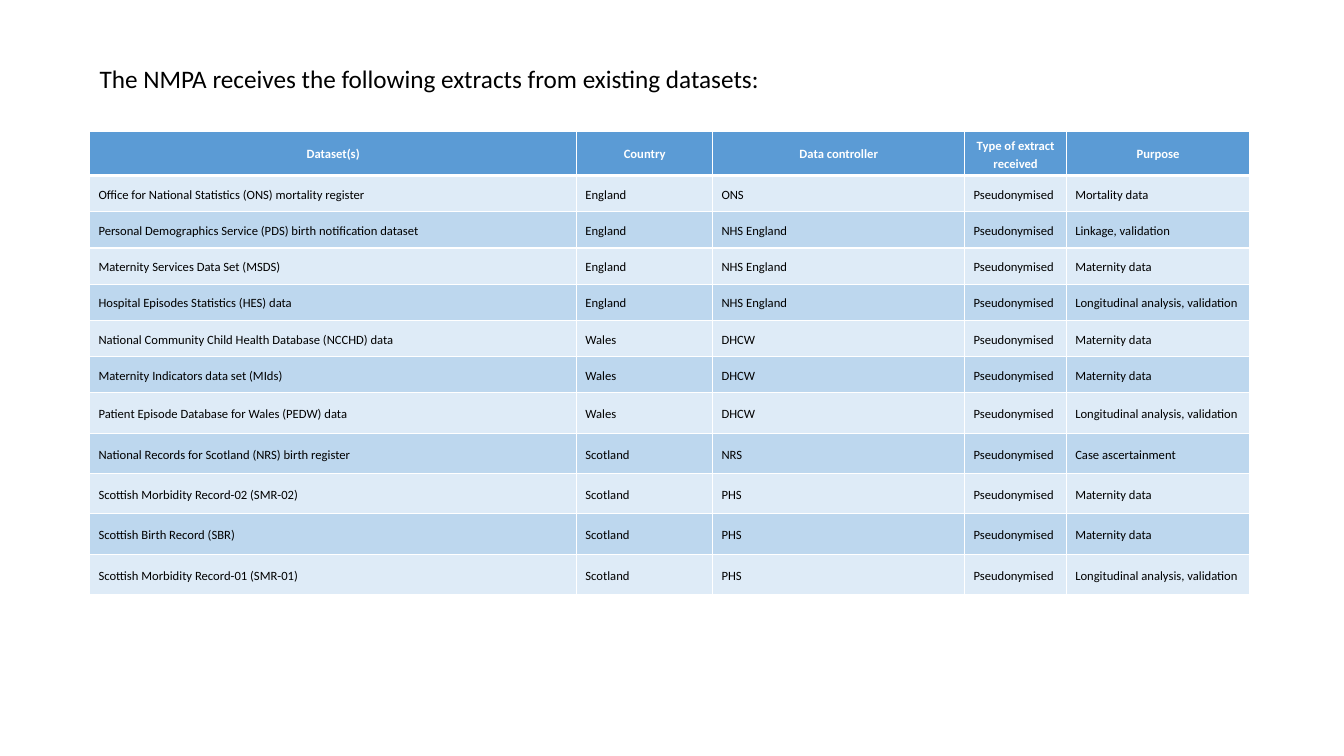
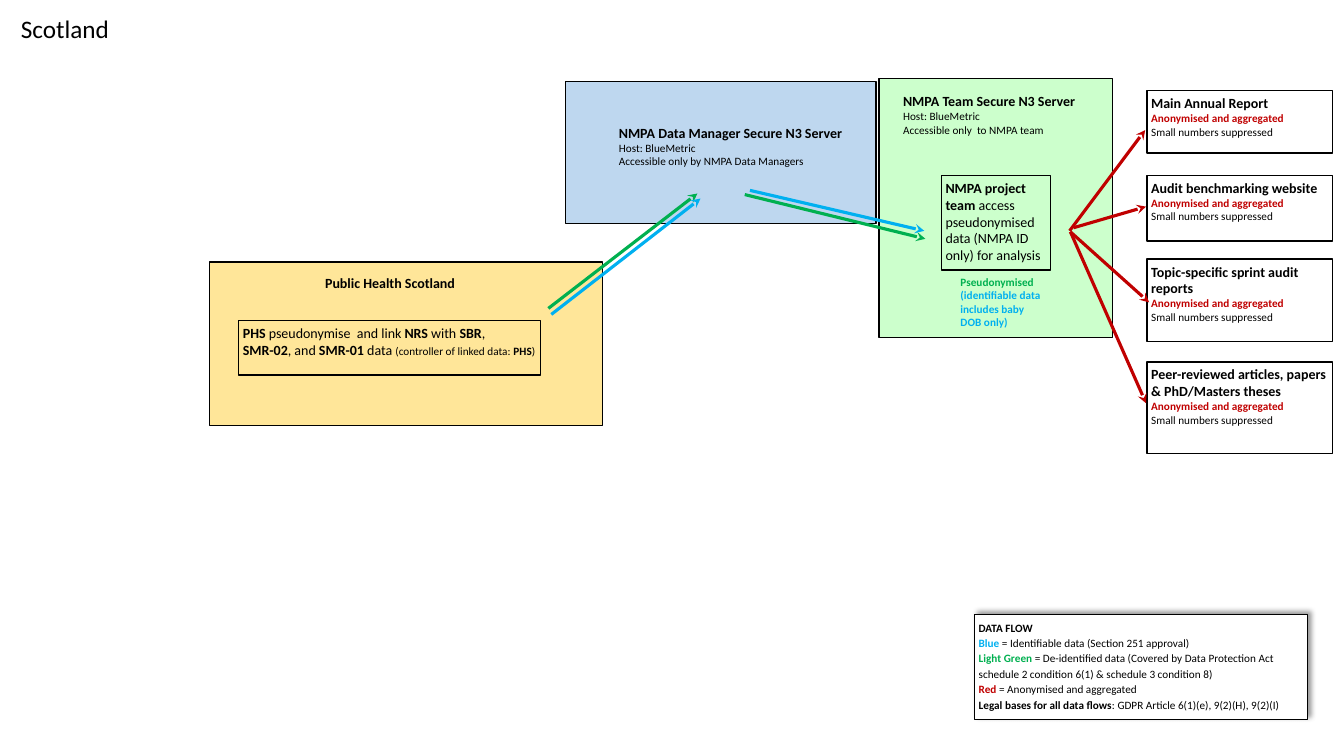
from dataclasses import dataclass
from typing import NamedTuple, Optional

from lxml.etree import SubElement
from pptx import Presentation
from pptx.dml.color import RGBColor
from pptx.enum.shapes import MSO_CONNECTOR, MSO_SHAPE
from pptx.enum.text import MSO_ANCHOR, PP_ALIGN
from pptx.oxml import parse_xml
from pptx.oxml.ns import nsdecls, qn
from pptx.util import Pt

# Shared look
FONT = "Calibri"
BLACK, WHITE = "000000", "FFFFFF"
BLUE, GREEN, RED = "00B0F0", "00B050", "C00000"
HEADER_FILL, ROW_FILLS = "5B9BD5", ("DEEBF7", "BDD7EE")
TITLE_SIZE, HEADING_SIZE, CELL_SIZE, NOTE_SIZE = 18, 10, 9, 8
INSET, TITLE_INSETS = 2.88, (7.2, 3.6)


class Span(NamedTuple):
    text: str
    size: float = NOTE_SIZE
    color: str = BLACK
    bold: bool = False


class Area(NamedTuple):
    left: float
    top: float
    width: float
    height: float


Lines = list[list[Span]]


@dataclass
class Panel:
    area: Area
    lines: Lines
    fill: Optional[str] = None
    border: float = 1
    spacing: Optional[float] = None


@dataclass
class Label:
    area: Area
    lines: Lines
    align: Optional[PP_ALIGN] = None
    insets: tuple[float, float] = (INSET, INSET)


@dataclass
class Flow:
    start: tuple[float, float]
    end: tuple[float, float]
    color: str


def rgb(color: str) -> RGBColor:
    return RGBColor.from_string(color)


def write_lines(frame, lines: Lines, align=PP_ALIGN.LEFT, spacing=None) -> None:
    for index, spans in enumerate(lines):
        para = frame.paragraphs[0] if index == 0 else frame.add_paragraph()
        para.alignment = align
        if spacing:
            para.line_spacing = spacing
        for span in spans:
            run = para.add_run()
            run.text = span.text
            run.font.name = FONT
            run.font.size = Pt(span.size)
            run.font.bold = span.bold
            run.font.color.rgb = rgb(span.color)


def set_frame(frame, insets: tuple[float, float]) -> None:
    frame.word_wrap = True
    frame.vertical_anchor = MSO_ANCHOR.TOP
    frame.margin_left = frame.margin_right = Pt(insets[0])
    frame.margin_top = frame.margin_bottom = Pt(insets[1])


def add_label(page, label: Label) -> None:
    box = page.shapes.add_textbox(*map(Pt, label.area))
    set_frame(box.text_frame, label.insets)
    write_lines(box.text_frame, label.lines, label.align or PP_ALIGN.LEFT)


def add_title(page, text: str, area: Area) -> None:
    add_label(page, Label(area, [[Span(text, TITLE_SIZE)]], insets=TITLE_INSETS))


def add_panel(page, panel: Panel):
    box = page.shapes.add_shape(MSO_SHAPE.RECTANGLE, *map(Pt, panel.area))
    box.shadow.inherit = False
    if panel.fill:
        box.fill.solid()
        box.fill.fore_color.rgb = rgb(panel.fill)
    else:
        box.fill.background()
    box.line.color.rgb = rgb(BLACK)
    box.line.width = Pt(panel.border)
    set_frame(box.text_frame, (INSET, INSET))
    write_lines(box.text_frame, panel.lines, spacing=panel.spacing)
    return box


def add_shadow(box) -> None:
    effects = box.element.spPr.find(qn("a:effectLst"))
    effects.append(parse_xml(
        f'<a:outerShdw {nsdecls("a")} blurRad="{Pt(4)}" dist="{Pt(3)}" dir="18900000" '
        f'algn="bl" rotWithShape="0"><a:srgbClr val="{BLACK}"><a:alpha val="40000"/>'
        '</a:srgbClr></a:outerShdw>'))


def add_flow(page, flow: Flow) -> None:
    arrow = page.shapes.add_connector(
        MSO_CONNECTOR.STRAIGHT, *map(Pt, (*flow.start, *flow.end)))
    arrow.line.color.rgb = rgb(flow.color)
    arrow.line.width = Pt(2.25)
    SubElement(arrow.line._get_or_add_ln(), qn("a:tailEnd"), type="stealth")
    SubElement(arrow.element.spPr, qn("a:effectLst"))


def set_borders(cell, top: float, bottom: float) -> None:
    properties = cell._tc.get_or_add_tcPr()
    for side, width in (("L", 1), ("R", 1), ("T", top), ("B", bottom)):
        properties.append(parse_xml(
            f'<a:ln{side} {nsdecls("a")} w="{Pt(width)}"><a:solidFill>'
            f'<a:srgbClr val="{WHITE}"/></a:solidFill></a:ln{side}>'))


# Datasets table
TABLE_AREA = Area(64.1, 93.6, 828.7, 330.5)
COLUMN_WIDTHS = (347.8, 97.2, 180, 72.7, 131)
ROW_HEIGHTS = (31.7, *[25.9] * 6, *[28.8] * 5)
HEADER = ("Dataset(s)", "Country", "Data controller", "Type of extract received", "Purpose")
MATERNITY, LONGITUDINAL = "Maternity data", "Longitudinal analysis, validation"
DATASETS = (
    ("Office for National Statistics (ONS) mortality register", "England", "ONS", "Mortality data"),
    ("Personal Demographics Service (PDS) birth notification dataset", "England", "NHS England",
     "Linkage, validation"),
    ("Maternity Services Data Set (MSDS)", "England", "NHS England", MATERNITY),
    ("Hospital Episodes Statistics (HES) data", "England", "NHS England", LONGITUDINAL),
    ("National Community Child Health Database (NCCHD) data", "Wales", "DHCW", MATERNITY),
    ("Maternity Indicators data set (MIds)", "Wales", "DHCW", MATERNITY),
    ("Patient Episode Database for Wales (PEDW) data", "Wales", "DHCW", LONGITUDINAL),
    ("National Records for Scotland (NRS) birth register", "Scotland", "NRS", "Case ascertainment"),
    ("Scottish Morbidity Record-02 (SMR-02)", "Scotland", "PHS", MATERNITY),
    ("Scottish Birth Record (SBR)", "Scotland", "PHS", MATERNITY),
    ("Scottish Morbidity Record-01 (SMR-01)", "Scotland", "PHS", LONGITUDINAL),
)


def build_datasets(page) -> None:
    add_title(page, "The NMPA receives the following extracts from existing datasets:",
              Area(64.1, 41.8, 557, 29))
    rows = [HEADER] + [(*row[:3], "Pseudonymised", row[3]) for row in DATASETS]
    table = page.shapes.add_table(len(rows), len(HEADER), *map(Pt, TABLE_AREA)).table
    for column, width in zip(table.columns, COLUMN_WIDTHS):
        column.width = Pt(width)
    for index, (values, height) in enumerate(zip(rows, ROW_HEIGHTS)):
        table.rows[index].height = Pt(height)
        heading = index == 0
        for cell, value in zip(table.rows[index].cells, values):
            set_borders(cell, top=3 if index == 1 else 1, bottom=3 if heading else 1)
            cell.fill.solid()
            cell.fill.fore_color.rgb = rgb(HEADER_FILL if heading else ROW_FILLS[(index - 1) % 2])
            cell.vertical_anchor = MSO_ANCHOR.MIDDLE
            cell.margin_left = cell.margin_right = Pt(6.3)
            cell.margin_top = cell.margin_bottom = Pt(3)
            span = Span(value, CELL_SIZE, WHITE if heading else BLACK, heading)
            write_lines(cell.text_frame, [[span]],
                        PP_ALIGN.CENTER if heading else PP_ALIGN.LEFT, 1.19)


# Scotland data flow
def heading_span(text: str) -> Span:
    return Span(text, HEADING_SIZE, bold=True)


def body_span(text: str) -> Span:
    return Span(text, HEADING_SIZE)


def server_lines(name: str, access: str) -> Lines:
    return [[heading_span(name)], [Span("Host: BlueMetric")], [Span(access)]]


def report_panel(title: str, top: float, height: float) -> Panel:
    return Panel(Area(819.4, top, 132.5, height), [
        [heading_span(title)],
        [Span("Anonymised and aggregated", color=RED, bold=True)],
        [Span("Small numbers suppressed")]])


PANELS = (
    Panel(Area(403.9, 58.3, 221.8, 101.5), [], "BED7EF"),
    Panel(Area(627.8, 56.2, 167, 185), [], "CCFFCC"),
    Panel(Area(672.5, 125.3, 77.8, 67.7), [[
        heading_span("NMPA project team "),
        body_span("access pseudonymised data (NMPA ID only) for analysis")]]),
    report_panel("Main Annual Report", 64.8, 44.6),
    report_panel("Audit benchmarking website", 125.3, 46.8),
    report_panel("Topic-specific sprint audit reports", 185, 59),
    report_panel("Peer-reviewed articles, papers & PhD/Masters theses", 258.5, 65.5),
    Panel(Area(149.8, 187.2, 280.8, 116.6), [], "FFE699"),
    Panel(Area(170.6, 229, 215.5, 38.9), [[
        heading_span("PHS "), body_span("pseudonymise  and link "),
        heading_span("NRS "), body_span("with "), heading_span("SBR"), body_span(", "),
        heading_span("SMR-02"), body_span(", and "), heading_span("SMR-01"), body_span(" data "),
        Span("(controller of linked data: "), Span("PHS", bold=True), Span(")")]]),
)
LABELS = (
    Label(Area(642.2, 63.4, 156.2, 72),
          server_lines("NMPA Team Secure N3 Server", "Accessible only  to NMPA team")),
    Label(Area(170.6, 193, 216, 19.4), [[heading_span("Public Health Scotland")]],
          PP_ALIGN.CENTER),
    Label(Area(439.2, 85.7, 172, 39.6),
          server_lines("NMPA Data Manager Secure N3 Server",
                       "Accessible only by NMPA Data Managers")),
    Label(Area(679, 193, 76.3, 55.4), [
        [Span("Pseudonymised", color=GREEN, bold=True)],
        [Span("(identifiable data includes baby DOB only)", color=BLUE, bold=True)]],
          insets=TITLE_INSETS),
)
FLOWS = (
    Flow((532, 139), (661, 170.6), GREEN),
    Flow((764, 164.9), (818, 92.9), RED),
    Flow((766.8, 162.7), (818.6, 147.6), RED),
    Flow((764.6, 165.6), (820.8, 216), RED),
    Flow((764.6, 165.6), (818.6, 288), RED),
    Flow((391.7, 220.3), (498.2, 138.2), GREEN),
    Flow((393.8, 224.6), (500.4, 141.8), BLUE),
    Flow((535.7, 136), (660.2, 164.9), BLUE),
)
LEGEND = Panel(Area(696.2, 439.2, 237.6, 74.9), [
    [Span("DATA FLOW", bold=True)],
    [Span("Blue", color=BLUE, bold=True), Span(" = Identifiable data (Section 251 approval)")],
    [Span("Light Green ", color=GREEN, bold=True),
     Span("= De-identified data (Covered by Data Protection Act schedule 2 condition 6(1) "
          "& schedule 3 condition 8)")],
    [Span("Red ", color=RED, bold=True), Span("= Anonymised and aggregated")],
    [Span("Legal bases for all data flows", bold=True),
     Span(": GDPR Article 6(1)(e), 9(2)(H), 9(2)(I)")],
], WHITE, 0.5, 1.15)


def build_scotland(page) -> None:
    add_title(page, "Scotland", Area(7.9, 5.8, 234.7, 29))
    for panel in PANELS:
        add_panel(page, panel)
    for label in LABELS:
        add_label(page, label)
    for flow in FLOWS:
        add_flow(page, flow)
    add_shadow(add_panel(page, LEGEND))


def main() -> None:
    deck = Presentation()
    deck.slide_width, deck.slide_height = Pt(960), Pt(540)
    for build in (build_datasets, build_scotland):
        build(deck.slides.add_slide(deck.slide_layouts[6]))
    deck.save("out.pptx")


if __name__ == "__main__":
    main()
